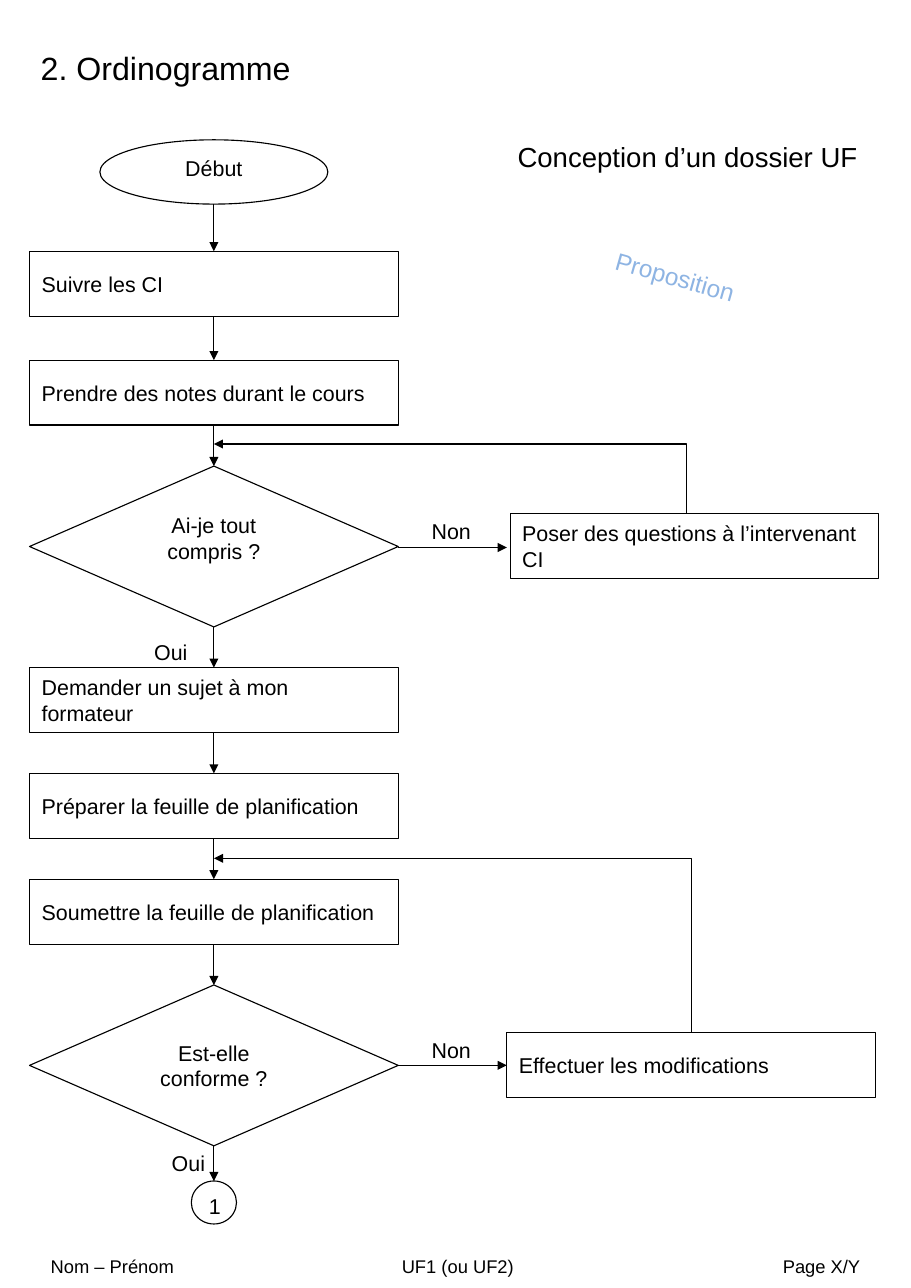
from lxml import etree
from pptx import Presentation
from pptx.dml.color import RGBColor
from pptx.enum.shapes import MSO_CONNECTOR, MSO_SHAPE
from pptx.enum.text import MSO_ANCHOR, PP_ALIGN
from pptx.oxml.ns import qn
from pptx.util import Pt

OVAL = MSO_SHAPE.OVAL
RECTANGLE = MSO_SHAPE.RECTANGLE
DECISION = MSO_SHAPE.FLOWCHART_DECISION
JUNCTION = MSO_SHAPE.FLOWCHART_CONNECTOR
STRAIGHT = MSO_CONNECTOR.STRAIGHT
ELBOW = MSO_CONNECTOR.ELBOW
LEFT = PP_ALIGN.LEFT
CENTER = PP_ALIGN.CENTER
TOP = MSO_ANCHOR.TOP
MIDDLE = MSO_ANCHOR.MIDDLE

BLACK = "000000"
WHITE = "FFFFFF"
PALE_BLUE = "8EB4E3"
FONT = "Arial"
AXIS = 139.8
STEP_WIDTH = 241
STEP_HEIGHT = 42.4
DECISION_HEIGHT = 105.1

FLOW = [
    (OVAL, "Début", 91.4, 149, 42, TOP),
    (RECTANGLE, "Suivre les CI", 164.2, STEP_WIDTH, STEP_HEIGHT, MIDDLE),
    (RECTANGLE, "Prendre des notes durant le cours", 235.4, STEP_WIDTH, STEP_HEIGHT, MIDDLE),
    (DECISION, "Ai-je tout compris ?", 304.6, STEP_WIDTH, DECISION_HEIGHT, TOP),
    (RECTANGLE, "Demander un sujet à mon formateur", 436.3, STEP_WIDTH, STEP_HEIGHT, MIDDLE),
    (RECTANGLE, "Préparer la feuille de planification", 505.4, STEP_WIDTH, STEP_HEIGHT, MIDDLE),
    (RECTANGLE, "Soumettre la feuille de planification", 574.6, STEP_WIDTH, STEP_HEIGHT, MIDDLE),
    (DECISION, "Est-elle conforme ?", 643.7, STEP_WIDTH, DECISION_HEIGHT, MIDDLE),
    (JUNCTION, "1", 771.8, 29.5, 28.1, TOP),
]

CORRECTIONS = [
    ("Poser des questions à l’intervenant CI", 333.4, 335.5, 357.8, 448.6, 290.2),
    ("Effectuer les modifications", 331.2, 674.6, 696.2, 452.2, 560.9),
]

LABELS = [
    ("Non", 275, 334.8, 53.3),
    ("Oui", 93.6, 414, 44.6),
    ("Non", 275, 673.9, 53.3),
    ("Oui", 105.1, 748.1, 39.6),
]


def color(hex_value):
    return RGBColor.from_string(hex_value)


def write_text(shape, text, size, align=LEFT, anchor=TOP, hex_value=BLACK, wrap=True):
    frame = shape.text_frame
    frame.text = text
    frame.word_wrap = wrap
    frame.vertical_anchor = anchor
    paragraph = frame.paragraphs[0]
    paragraph.alignment = align
    for run in paragraph.runs:
        run.font.name = FONT
        run.font.size = Pt(size)
        run.font.color.rgb = color(hex_value)
    return paragraph


def set_insets(shape):
    frame = shape.text_frame
    frame.margin_left = frame.margin_right = Pt(7.9)
    frame.margin_top = frame.margin_bottom = Pt(4)


def add_step(slide, preset, text, left, top, width, height, anchor):
    shape = slide.shapes.add_shape(preset, Pt(left), Pt(top), Pt(width), Pt(height))
    shape.shadow.inherit = False
    shape.fill.solid()
    shape.fill.fore_color.rgb = color(WHITE)
    shape.line.color.rgb = color(BLACK)
    shape.line.width = Pt(0.75)
    write_text(shape, text, 14, LEFT if preset == RECTANGLE else CENTER, anchor)
    if preset != JUNCTION:
        set_insets(shape)


def add_text(slide, text, left, top, width, height, size, **style):
    box = slide.shapes.add_textbox(Pt(left), Pt(top), Pt(width), Pt(height))
    write_text(box, text, size, **style)
    return box


def add_arrow(slide, kind, start, end, arrow_end="tailEnd"):
    connector = slide.shapes.add_connector(kind, *(Pt(value) for value in start + end))
    connector.line.color.rgb = color(BLACK)
    connector.line.width = Pt(0.75)
    line = connector.line._get_or_add_ln()
    etree.SubElement(line, qn("a:" + arrow_end), type="triangle")
    properties = connector._element.spPr
    etree.SubElement(properties, qn("a:effectLst"))
    if kind == ELBOW:
        properties.find(qn("a:prstGeom")).set("prst", "bentConnector2")


def add_title(slide):
    title = slide.shapes.title
    title.left, title.top, title.width, title.height = Pt(19.4), Pt(28.1), Pt(179.3), Pt(32.4)
    write_text(title, "2. Ordinogramme", 21, wrap=False)


def add_flow(slide):
    for preset, text, top, width, height, anchor in FLOW:
        add_step(slide, preset, text, AXIS - width / 2, top, width, height, anchor)
    for upper, lower in zip(FLOW, FLOW[1:]):
        add_arrow(slide, STRAIGHT, (AXIS, upper[2] + upper[4]), (AXIS, lower[2]))


def add_correction(slide, text, left, top, branch_y, loop_x, loop_y):
    add_step(slide, RECTANGLE, text, left, top, STEP_WIDTH, STEP_HEIGHT, MIDDLE)
    add_arrow(slide, STRAIGHT, (AXIS + STEP_WIDTH / 2, branch_y), (331.2, branch_y))
    add_arrow(slide, ELBOW, (AXIS, loop_y), (loop_x, top), "headEnd")


def add_footer(slide):
    footer = add_text(slide, "Nom – Prénom \tUF1 (ou UF2) \tPage X/Y",
                      25.2, 812.2, 555.8, 30.2, 12, anchor=MIDDLE)
    set_insets(footer)
    properties = footer.text_frame.paragraphs[0]._p.get_or_add_pPr()
    tabs = etree.SubElement(properties, qn("a:tabLst"))
    for position, align in ((267.8, "ctr"), (529.2, "r")):
        etree.SubElement(tabs, qn("a:tab"), pos=str(Pt(position)), algn=align)


def main():
    presentation = Presentation()
    presentation.slide_width = Pt(595.4)
    presentation.slide_height = Pt(841.7)
    slide = presentation.slides.add_slide(presentation.slide_layouts[5])
    add_title(slide)
    add_text(slide, "Conception d’un dossier UF", 331.2, 87.8, 256.3, 28.8, 18)
    proposal = add_text(slide, "Proposition", 304.6, 167, 265.7, 54.7, 16,
                        align=CENTER, hex_value=PALE_BLUE, wrap=False)
    proposal.rotation = 15.7
    add_flow(slide)
    for correction in CORRECTIONS:
        add_correction(slide, *correction)
    for text, left, top, width in LABELS:
        add_text(slide, text, left, top, width, 20, 14)
    add_footer(slide)
    presentation.save("out.pptx")


if __name__ == "__main__":
    main()
